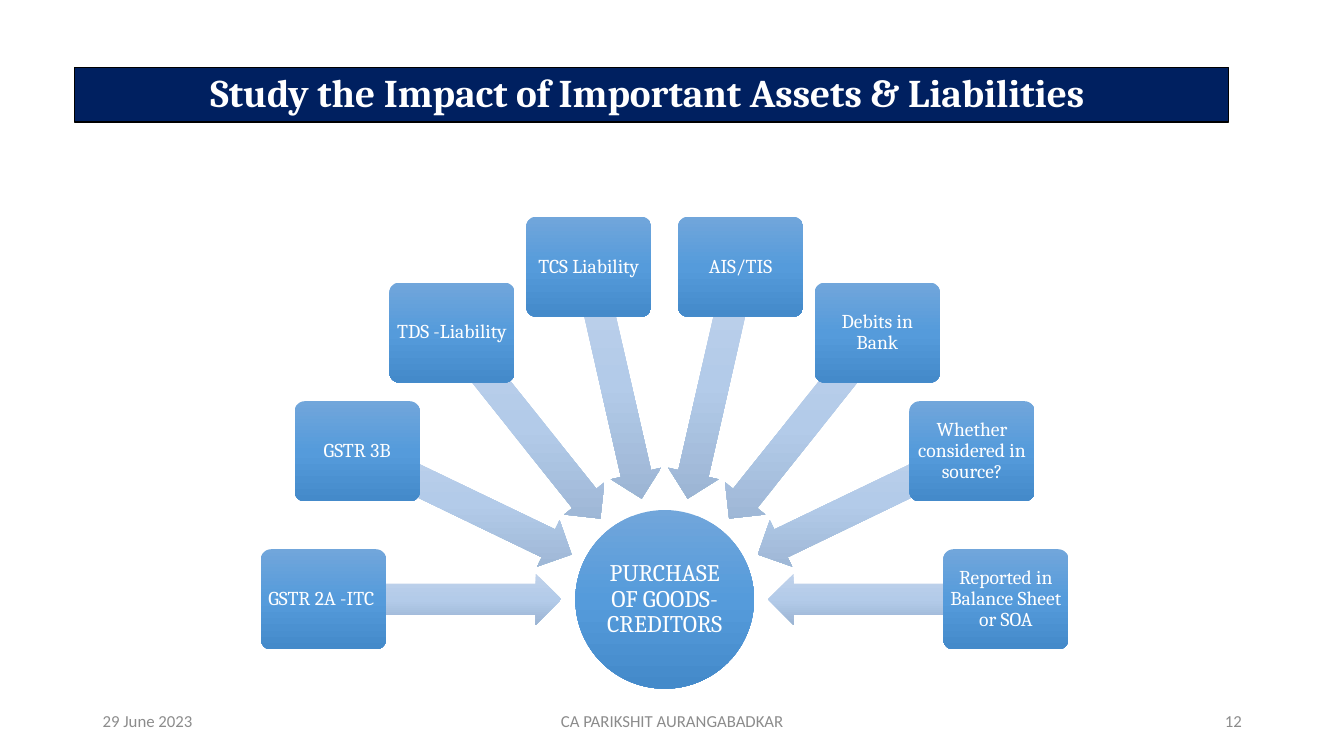
import math

import pptx
import pptx.dml.color
import pptx.enum.shapes
import pptx.enum.text
import pptx.oxml
import pptx.oxml.ns
import pptx.util

Pt = pptx.util.Pt
SHAPES = pptx.enum.shapes.MSO_SHAPE
ALIGN = pptx.enum.text.PP_ALIGN

TITLE = "Study the Impact of Important Assets & Liabilities "
HUB = "PURCHASE OF GOODS- CREDITORS"
SOURCES = [
    "GSTR 2A -ITC ",
    "GSTR 3B",
    "TDS -Liability ",
    "TCS Liability",
    "AIS/TIS",
    "Debits in Bank",
    "Whether considered in source?",
    "Reported in Balance Sheet or SOA",
]
FOOTERS = [
    ("29 June 2023", 66.24, 216, ALIGN.LEFT),
    ("CA PARIKSHIT AURANGABADKAR", 318.24, 324, ALIGN.CENTER),
    ("12", 678.24, 216, ALIGN.RIGHT),
]
COLOURS = {"navy": "002060", "black": "000000", "white": "FFFFFF", "grey": "8C8C8C"}
GRADIENTS = {
    "box": ["71A6DB", "559BDB", "448ACA"],
    "arrow": ["C0D2EB", "B3CBE9", "9BB4D3"],
}

HUB_X, HUB_Y, HUB_SIZE = 474.8, 428.1, 127.6
BOX_RADIUS, BOX_WIDTH, BOX_HEIGHT = 243.7, 89.4, 71.5
ARROW_RADIUS, ARROW_WIDTH, ARROW_HEIGHT = 158.8, 170, 36.7


def colour(name):
    return pptx.dml.color.RGBColor.from_string(COLOURS[name])


def write(shape, text, size, font, colour_name, align=ALIGN.CENTER,
          bold=False, spacing=None, margin=None):
    frame = shape.text_frame
    frame.word_wrap = True
    frame.vertical_anchor = pptx.enum.text.MSO_ANCHOR.MIDDLE
    if margin is not None:
        frame.margin_left = frame.margin_right = Pt(margin)
        frame.margin_top = frame.margin_bottom = Pt(margin)
    paragraph = frame.paragraphs[0]
    paragraph.alignment = align
    if spacing:
        paragraph.line_spacing = spacing
    run = paragraph.add_run()
    run.text = text
    run.font.size = Pt(size)
    run.font.name = font
    run.font.bold = bold
    run.font.color.rgb = colour(colour_name)


def fill_gradient(shape, name):
    stops = "".join(
        f'<a:gs pos="{index * 50000}"><a:srgbClr val="{value}"/></a:gs>'
        for index, value in enumerate(GRADIENTS[name])
    )
    gradient = pptx.oxml.parse_xml(
        f'<a:gradFill {pptx.oxml.ns.nsdecls("a")} rotWithShape="0">'
        f'<a:gsLst>{stops}</a:gsLst><a:lin ang="5400000" scaled="0"/></a:gradFill>'
    )
    shape.fill.background()
    properties = shape.element.spPr
    properties.replace(properties.find(pptx.oxml.ns.qn("a:noFill")), gradient)


def add_centred(slide, kind, x, y, width, height, gradient):
    shape = slide.shapes.add_shape(
        kind, Pt(x - width / 2), Pt(y - height / 2), Pt(width), Pt(height))
    shape.shadow.inherit = False
    fill_gradient(shape, gradient)
    shape.line.fill.background()
    return shape


def add_title(slide):
    title = slide.shapes.add_shape(
        SHAPES.RECTANGLE, Pt(53.3), Pt(48.2), Pt(824.4), Pt(38.9))
    title.shadow.inherit = False
    title.fill.solid()
    title.fill.fore_color.rgb = colour("navy")
    title.line.color.rgb = colour("black")
    title.line.width = Pt(1)
    write(title, TITLE, 28, "Cambria", "white", bold=True, spacing=0.9)


def add_diagram(slide):
    hub = add_centred(slide, SHAPES.OVAL, HUB_X, HUB_Y, HUB_SIZE, HUB_SIZE, "box")
    write(hub, HUB, 17, "Cambria", "white", spacing=0.9, margin=0.8)

    step = 180 / (len(SOURCES) - 1)
    for index, source in enumerate(SOURCES):
        rotation = 180 + index * step
        across = math.cos(math.radians(rotation))
        down = math.sin(math.radians(rotation))
        arrow = add_centred(
            slide, SHAPES.LEFT_ARROW, HUB_X + ARROW_RADIUS * across,
            HUB_Y + ARROW_RADIUS * down, ARROW_WIDTH, ARROW_HEIGHT, "arrow")
        arrow.adjustments[0] = 0.6
        arrow.adjustments[1] = 0.5
        arrow.rotation = rotation % 360
        box = add_centred(
            slide, SHAPES.ROUNDED_RECTANGLE, HUB_X + BOX_RADIUS * across,
            HUB_Y + BOX_RADIUS * down, BOX_WIDTH, BOX_HEIGHT, "box")
        box.adjustments[0] = 0.1
        write(box, source, 14, "Cambria", "white", spacing=0.9, margin=2.1)


def add_footers(slide):
    for text, left, width, align in FOOTERS:
        footer = slide.shapes.add_textbox(Pt(left), Pt(500.4), Pt(width), Pt(28.8))
        write(footer, text, 12, "Calibri", "grey", align=align)


def main():
    presentation = pptx.Presentation()
    presentation.slide_width = Pt(960)
    presentation.slide_height = Pt(540)
    slide = presentation.slides.add_slide(presentation.slide_layouts[6])
    add_title(slide)
    add_diagram(slide)
    add_footers(slide)
    presentation.save("out.pptx")


if __name__ == "__main__":
    main()
